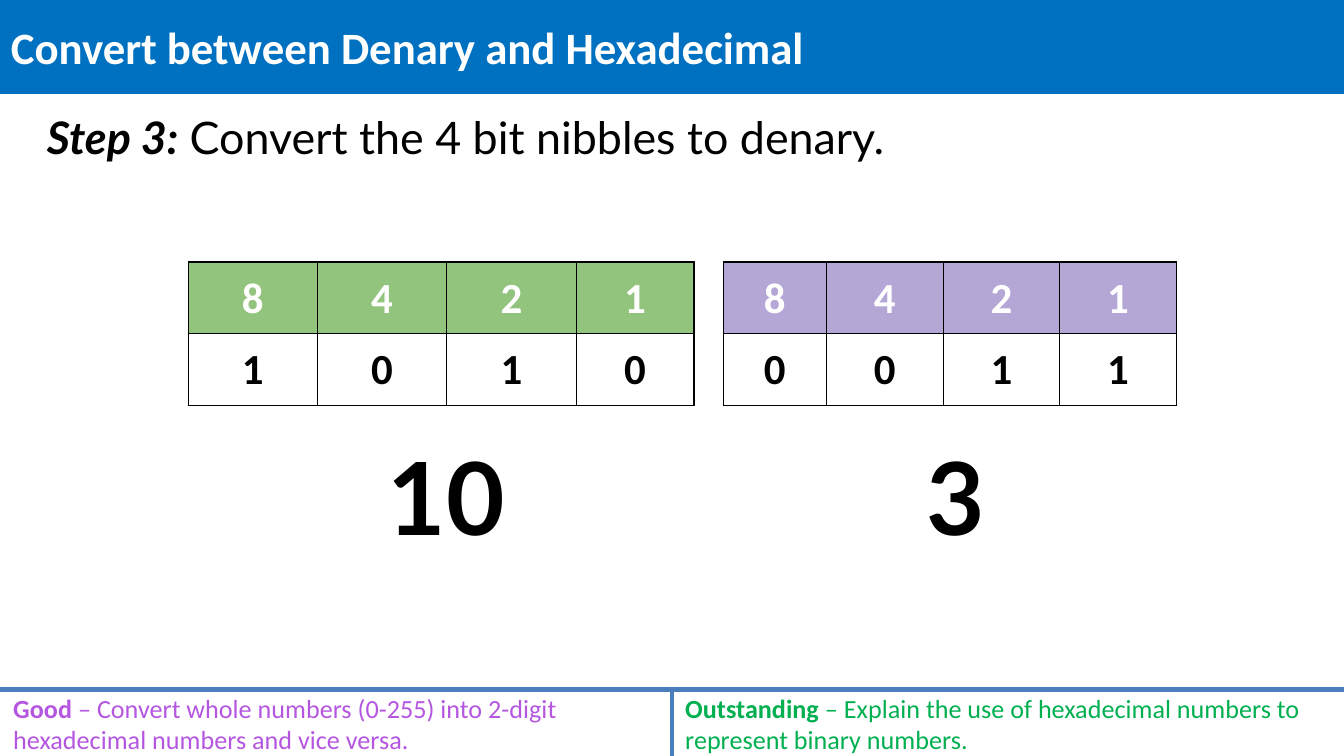
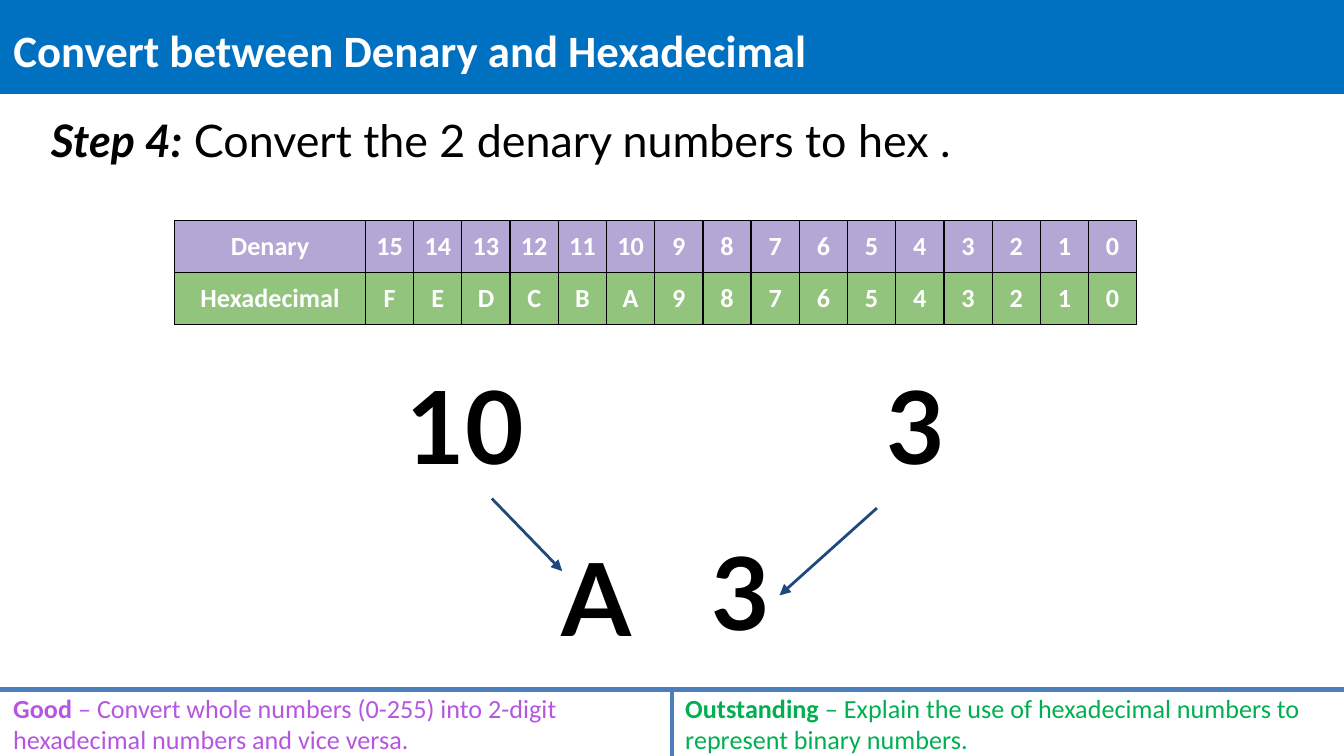
from lxml.etree import SubElement
from pptx import Presentation
from pptx.dml.color import RGBColor
from pptx.enum.shapes import MSO_CONNECTOR, MSO_SHAPE
from pptx.enum.text import MSO_ANCHOR, MSO_AUTO_SIZE, PP_ALIGN
from pptx.oxml.ns import qn
from pptx.util import Pt

COLORS = {
    "band": "0070C0", "rule": "4B7EBC", "arrow": "1F497D",
    "good": "B556E0", "outstanding": "00B050",
    "green": "93C47D", "purple": "B4A7D6",
    "white": "FFFFFF", "black": "000000",
}
WIDTH, HEIGHT = 720, 405
FOOTER_TOP = 369.4
INSET = 5.4
TITLE = "Convert between Denary and Hexadecimal"
FOOTERS = [
    (0, 354.2, "good", "Good",
     " – Convert whole numbers (0-255) into 2-digit hexadecimal numbers and vice versa."),
    (360, 351.4, "outstanding", "Outstanding",
     " – Explain the use of hexadecimal numbers to represent binary numbers."),
]

# Each table: left, top, column widths, row height, text size, rows of (fill, text colour, values)
# Each number: text, left, top, width
SLIDES = [
    {
        "title_at": (-1.4, 5.8),
        "step_at": (18, 55.4),
        "step": ("Step 3:", " Convert the 4 bit nibbles to denary."),
        "tables": [
            (100.8, 140.4, [69.3] * 3 + [63.2], 38.3, 23,
             [("green", "white", "8421"), (None, "black", "1010")]),
            (387.4, 140.4, [55.4] + [62.5] * 3, 38.3, 23,
             [("purple", "white", "8421"), (None, "black", "0011")]),
        ],
        "numbers": [("3", 491, 227.5, 51), ("10", 202.3, 227.5, 97.2)],
        "arrows": [],
    },
    {
        "title_at": (0, 7.2),
        "step_at": (20.2, 56.9),
        "step": ("Step 4:", " Convert the 2 denary numbers to hex ."),
        "tables": [
            (93.6, 118.3, [102.2] + [25.85] * 16, 27.8, 14,
             [("purple", "white", ["Denary"] + [str(n) for n in range(15, -1, -1)]),
              ("green", "white", ["Hexadecimal"] + [f"{n:X}" for n in range(15, -1, -1)])]),
        ],
        "numbers": [("3", 469.4, 189.4, 51), ("10", 212.4, 189.4, 97.2),
                    ("A", 295.2, 281.5, 97.2), ("3", 375.8, 278.6, 97.2)],
        "arrows": [(263.5, 267.1, 301.2, 306), (469.8, 272.2, 417.6, 319)],
    },
]


def write(frame, text, lead="", size=24, font="Lato", color="black", bold=False,
          lead_italic=False, align=PP_ALIGN.LEFT, anchor=MSO_ANCHOR.TOP, before=0):
    """Write one paragraph, with an optional bold lead-in."""
    frame.word_wrap = True
    frame.vertical_anchor = anchor
    paragraph = frame.paragraphs[0]
    paragraph.alignment = align
    paragraph.space_before = Pt(before)
    for part, is_bold, is_italic in ((lead, True, lead_italic), (text, bold, False)):
        if part:
            run = paragraph.add_run()
            run.text = part
            run.font.name, run.font.size = font, Pt(size)
            run.font.bold, run.font.italic = is_bold, is_italic
            run.font.color.rgb = RGBColor.from_string(COLORS[color])


def add_line(slide, x1, y1, x2, y2, color, width, arrow=False):
    connector = slide.shapes.add_connector(
        MSO_CONNECTOR.STRAIGHT, Pt(x1), Pt(y1), Pt(x2), Pt(y2))
    connector.line.color.rgb = RGBColor.from_string(COLORS[color])
    connector.line.width = Pt(width)
    if arrow:
        SubElement(connector.line._get_or_add_ln(), qn("a:tailEnd"), type="triangle")
    SubElement(connector._element.spPr, qn("a:effectLst"))


presentation = Presentation()
presentation.slide_width, presentation.slide_height = Pt(WIDTH), Pt(HEIGHT)

for content in SLIDES:
    slide = presentation.slides.add_slide(presentation.slide_layouts[5])
    shapes = slide.shapes

    # Footer with the two learning goals
    for left, width, color, lead, text in FOOTERS:
        goal = shapes.add_textbox(Pt(left), Pt(367.2), Pt(width), Pt(41))
        write(goal.text_frame, text, lead=lead, size=14, font="Calibri", color=color)
    add_line(slide, 0, FOOTER_TOP, WIDTH, FOOTER_TOP, "rule", 2.25)
    add_line(slide, WIDTH / 2, FOOTER_TOP, WIDTH / 2, HEIGHT, "rule", 2.25)

    # Title on its band
    band = shapes.add_shape(MSO_SHAPE.RECTANGLE, 0, 0, Pt(WIDTH), Pt(50.4))
    band.shadow.inherit = False
    band.fill.solid()
    band.fill.fore_color.rgb = RGBColor.from_string(COLORS["band"])
    band.line.fill.background()
    title = shapes.title
    title.left, title.top = (Pt(value) for value in content["title_at"])
    title.width, title.height = Pt(WIDTH), Pt(38.2)
    title.text_frame.auto_size = MSO_AUTO_SIZE.NONE
    write(title.text_frame, TITLE, font="Calibri", color="white", bold=True,
          anchor=MSO_ANCHOR.MIDDLE)
    shapes._spTree.append(title._element)

    # Step
    left, top = content["step_at"]
    step = shapes.add_textbox(Pt(left), Pt(top), Pt(680.4), Pt(303.8))
    lead, text = content["step"]
    write(step.text_frame, text, lead=lead, lead_italic=True, before=4.8)

    # Place value and conversion tables
    for left, top, widths, row_height, size, rows in content["tables"]:
        table = shapes.add_table(len(rows), len(widths), Pt(left), Pt(top),
                                 Pt(sum(widths)), Pt(row_height * len(rows))).table
        table.first_row = table.horz_banding = False
        for column, width in zip(table.columns, widths):
            column.width = Pt(width)
        for r, (fill, color, values) in enumerate(rows):
            table.rows[r].height = Pt(row_height)
            for c, value in enumerate(values):
                cell = table.cell(r, c)
                cell.margin_left = cell.margin_right = Pt(INSET)
                cell.margin_top = cell.margin_bottom = Pt(INSET)
                write(cell.text_frame, value, size=size, font="Calibri", color=color,
                      bold=True, align=PP_ALIGN.CENTER)
                properties = cell._tc.get_or_add_tcPr()
                for side in ("lnL", "lnR", "lnT", "lnB"):
                    border = SubElement(properties, qn(f"a:{side}"), w=str(Pt(0.75)))
                    border_fill = SubElement(border, qn("a:solidFill"))
                    SubElement(border_fill, qn("a:srgbClr"), val=COLORS["black"])
                if fill:
                    cell.fill.solid()
                    cell.fill.fore_color.rgb = RGBColor.from_string(COLORS[fill])
                else:
                    cell.fill.background()

    # Large numbers
    for text, left, top, width in content["numbers"]:
        frame = shapes.add_textbox(Pt(left), Pt(top), Pt(width), Pt(75.6)).text_frame
        frame.margin_left = frame.margin_right = Pt(INSET)
        frame.margin_top = frame.margin_bottom = Pt(INSET)
        write(frame, text, size=54, bold=True)

    # Arrows from denary to hexadecimal
    for x1, y1, x2, y2 in content["arrows"]:
        add_line(slide, x1, y1, x2, y2, "arrow", 1.5, arrow=True)

presentation.save("out.pptx")
